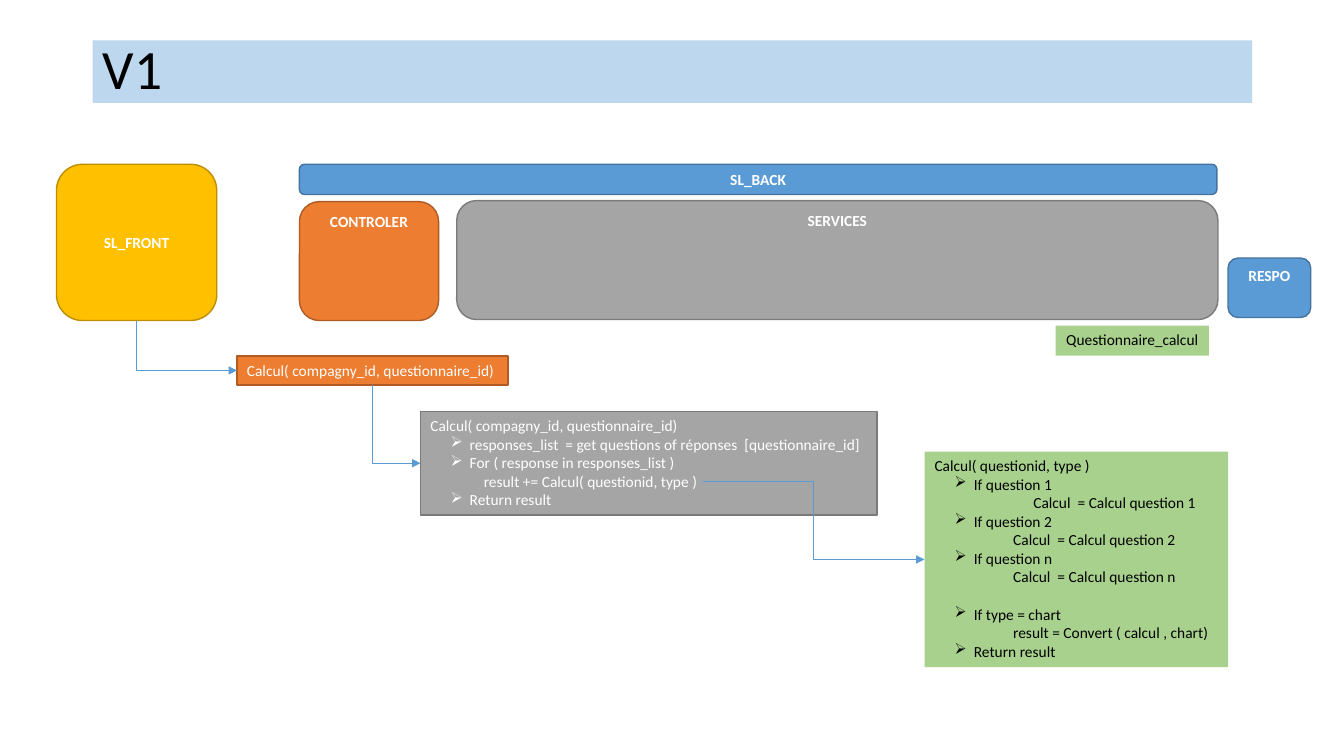
import pptx
import pptx.util
import pptx.dml.color
import pptx.enum.shapes
import pptx.enum.text
import pptx.oxml.ns
from lxml import etree

Inches, Pt = pptx.util.Inches, pptx.util.Pt
RGB = pptx.dml.color.RGBColor
SHAPE = pptx.enum.shapes.MSO_SHAPE
ALIGN = pptx.enum.text.PP_ALIGN
ANCHOR = pptx.enum.text.MSO_ANCHOR
qn = pptx.oxml.ns.qn

BLACK = RGB(0x00, 0x00, 0x00)
WHITE = RGB(0xFF, 0xFF, 0xFF)
PALE_BLUE = RGB(0xBD, 0xD7, 0xEE)
BLUE = RGB(0x5B, 0x9B, 0xD5)
DARK_BLUE = RGB(0x43, 0x73, 0x9E)
YELLOW = RGB(0xFF, 0xC0, 0x00)
DARK_YELLOW = RGB(0xBD, 0x8E, 0x00)
ORANGE = RGB(0xED, 0x7D, 0x31)
DARK_ORANGE = RGB(0xAF, 0x5C, 0x24)
GRAY = RGB(0xA5, 0xA5, 0xA5)
DARK_GRAY = RGB(0x7A, 0x7A, 0x7A)
GREEN = RGB(0xA9, 0xD1, 0x8E)

FONT = "Calibri"
BODY = 11
BULLET = None  # indent value of a bulleted line
BLANK_LINE = 13.4

CONTROLLER_CALL = [("Calcul( compagny_id, questionnaire_id)", 0, 0)]
SERVICE_CALL = CONTROLLER_CALL + [
    ("responses_list  = get questions of réponses  [questionnaire_id]", BULLET, 0),
    ("For ( response in responses_list )", BULLET, 0),
    ("result += Calcul( questionid, type )", 0.53, 0),
    ("Return result", BULLET, 0),
]
QUESTION_CALL = [
    ("Calcul( questionid, type )", 0, 0),
    ("If question 1", BULLET, 0),
    ("Calcul  = Calcul question 1", 0.98, 0),
    ("If question 2", BULLET, 0),
    ("Calcul  = Calcul question 2", 0.78, 0),
    ("If question n", BULLET, 0),
    ("Calcul  = Calcul question n", 0.78, 0),
    ("If type = chart", BULLET, BLANK_LINE),
    ("result = Convert ( calcul , chart)", 0.78, 0),
    ("Return result", BULLET, 0),
]


def add_box(s, kind, box, fill, border=None):
    sp = s.shapes.add_shape(kind, *map(Inches, box))
    sp.shadow.inherit = False
    sp.fill.solid()
    sp.fill.fore_color.rgb = fill
    if border is None:
        sp.line.fill.background()
    else:
        sp.line.color.rgb = border
        sp.line.width = Pt(1)
    sp.text_frame.word_wrap = True
    sp.text_frame.vertical_anchor = ANCHOR.TOP
    return sp


def write(p, text, color, size=BODY, bold=False, align=ALIGN.LEFT):
    p.text = text
    p.alignment = align
    for r in p.runs:
        r.font.name = FONT
        r.font.size = Pt(size)
        r.font.bold = bold
        r.font.color.rgb = color


def set_indent(p, left, hanging=0):
    pPr = p._p.get_or_add_pPr()
    pPr.set("marL", str(Inches(left)))
    pPr.set("indent", str(Inches(-hanging)))
    return pPr


def title_bar(s, box):
    sp = add_box(s, SHAPE.RECTANGLE, box, PALE_BLUE)
    sp.text_frame.vertical_anchor = ANCHOR.MIDDLE
    p = sp.text_frame.paragraphs[0]
    write(p, "V1", BLACK, 39.6)
    p.line_spacing = 0.9


def architecture(s, x, y):
    """Draws the blocks of the application and returns the front end."""
    top, middle = ANCHOR.TOP, ANCHOR.MIDDLE
    blocks = [
        ("SL_FRONT", (0, 0, 1.59, 1.55), YELLOW, DARK_YELLOW, middle),
        ("CONTROLER", (2.41, 0.37, 1.38, 1.18), ORANGE, DARK_ORANGE, top),
        ("SERVICES", (3.97, 0.36, 7.55, 1.18), GRAY, DARK_GRAY, top),
        ("SL_BACK", (2.41, 0, 9.1, 0.3), BLUE, DARK_BLUE, middle),
        ("RESPO", (11.62, 0.93, 0.82, 0.59), BLUE, DARK_BLUE, top),
    ]
    shapes = []
    for name, (dx, dy, w, h), fill, border, anchor in blocks:
        sp = add_box(s, SHAPE.ROUNDED_RECTANGLE, (x + dx, y + dy, w, h), fill, border)
        sp.text_frame.vertical_anchor = anchor
        write(sp.text_frame.paragraphs[0], name, WHITE, bold=True, align=ALIGN.CENTER)
        shapes.append(sp)
    return shapes[0]


def call_box(s, box, lines, color, fill, border=None):
    sp = add_box(s, SHAPE.RECTANGLE, box, fill, border)
    tf = sp.text_frame
    for i, (text, indent, gap) in enumerate(lines):
        p = tf.add_paragraph() if i else tf.paragraphs[0]
        if indent is BULLET:
            pPr = set_indent(p, 0.39, 0.19)
            etree.SubElement(pPr, qn("a:buChar")).set("char", "➢")
        elif indent:
            set_indent(p, indent)
        if gap:
            p.space_before = Pt(gap)
        write(p, text, color)
    return sp


def elbow(s, start, target):
    """Draws an arrow from a point to the left side of the target."""
    c = s.shapes.add_connector(pptx.enum.shapes.MSO_CONNECTOR.ELBOW, *start, *start)
    c.end_connect(target, 1)
    c.line.color.rgb = BLUE
    c.line.width = Pt(0.5)
    etree.SubElement(c.line._get_or_add_ln(), qn("a:tailEnd")).set("type", "triangle")
    etree.SubElement(c._element.spPr, qn("a:effectLst"))
    return c


def down_then_right(s, source, target):
    """Links the bottom of the source to the left side of the target."""
    bottom = source.left + source.width // 2, source.top + source.height
    c = elbow(s, bottom, target)
    c.begin_connect(source, 2)
    x, y, w, h = c.left, c.top, c.width, c.height
    c.left, c.top = x + (w - h) // 2, y + (h - w) // 2
    c.width, c.height = h, w
    spPr = c._element.spPr
    spPr.find(qn("a:prstGeom")).set("prst", "bentConnector2")
    xfrm = spPr.find(qn("a:xfrm"))
    xfrm.set("rot", str(270 * 60000))
    xfrm.set("flipH", "1")


def call_chain(s, x, y, front):
    controller = call_box(s, (x, y, 2.69, 0.29), CONTROLLER_CALL, WHITE, ORANGE, DARK_ORANGE)
    controller.text_frame.word_wrap = False
    service = call_box(s, (x + 1.82, y + 0.55, 4.53, 1.03), SERVICE_CALL, WHITE, GRAY, DARK_GRAY)
    down_then_right(s, controller, service)
    question = call_box(s, (x + 6.82, y + 0.95, 3.01, 2.14), QUESTION_CALL, BLACK, GREEN)
    elbow(s, (Inches(x + 4.62), Inches(y + 1.25)), question)
    down_then_right(s, front, controller)


def table_label(s, box):
    sp = add_box(s, SHAPE.RECTANGLE, box, GREEN)
    write(sp.text_frame.paragraphs[0], "Questionnaire_calcul", BLACK, align=ALIGN.CENTER)


def main():
    prs = pptx.Presentation()
    prs.slide_width, prs.slide_height = Inches(13.33), Inches(7.5)
    s = prs.slides.add_slide(prs.slide_layouts[6])
    title_bar(s, (0.92, 0.4, 11.5, 0.62))
    front = architecture(s, 0.56, 1.63)
    call_chain(s, 2.35, 3.53, front)
    table_label(s, (10.47, 3.23, 1.52, 0.3))
    prs.save("out.pptx")


if __name__ == "__main__":
    main()
